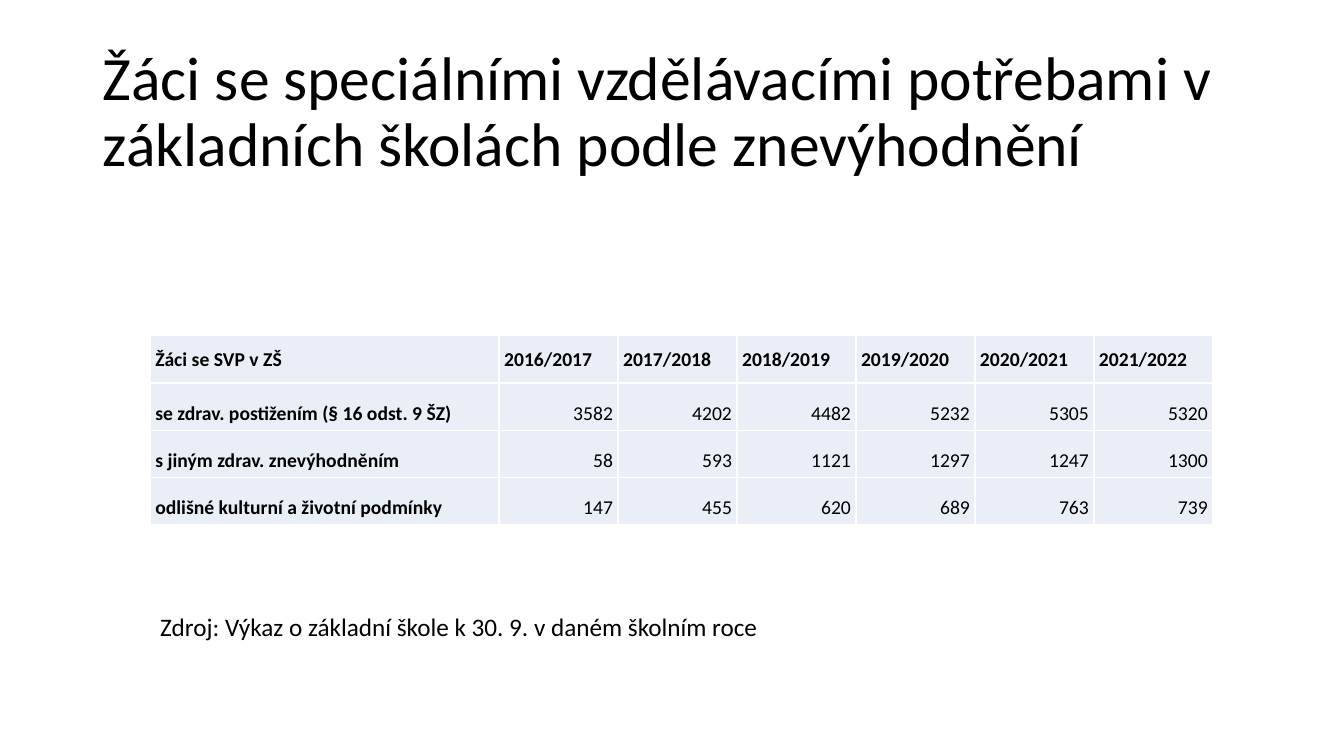
"""Build the slide on pupils with special educational needs in primary schools."""
from lxml import etree
from pptx import Presentation
from pptx.dml.color import RGBColor
from pptx.enum import text
from pptx.oxml import ns
from pptx.util import Inches, Pt

FONT = "Calibri"
BLACK, WHITE, PALE_BLUE = "000000", "FFFFFF", "EAEFF7"
YEARS = ["2016/2017", "2017/2018", "2018/2019", "2019/2020", "2020/2021", "2021/2022"]
PUPILS = {
    "se zdrav. postižením (§ 16 odst. 9 ŠZ)": [3582, 4202, 4482, 5232, 5305, 5320],
    "s jiným zdrav. znevýhodněním": [58, 593, 1121, 1297, 1247, 1300],
    "odlišné kulturní a životní podmínky": [147, 455, 620, 689, 763, 739],
}


def add_text(paragraph, content, size, bold=False):
    run = paragraph.add_run()
    run.text = content
    run.font.name = FONT
    run.font.size = Pt(size)
    run.font.bold = bold
    run.font.color.rgb = RGBColor.from_string(BLACK)


def add_borders(cell, color):
    properties = cell._tc.get_or_add_tcPr()
    for side in ("lnL", "lnR", "lnT", "lnB"):
        line = etree.SubElement(properties, ns.qn(f"a:{side}"), w=str(Pt(1)))
        fill = etree.SubElement(line, ns.qn("a:solidFill"))
        etree.SubElement(fill, ns.qn("a:srgbClr"), val=color)


presentation = Presentation()
presentation.slide_width = Inches(13.33)
presentation.slide_height = Inches(7.5)
slide = presentation.slides.add_slide(presentation.slide_layouts[5])

title = slide.shapes.title
title.left, title.top = Inches(0.92), Inches(0.4)
title.width, title.height = Inches(11.5), Inches(1.45)
title.text_frame.vertical_anchor = text.MSO_ANCHOR.MIDDLE
title.text_frame.word_wrap = True
title.text_frame.auto_size = text.MSO_AUTO_SIZE.NONE
heading = title.text_frame.paragraphs[0]
heading.alignment = text.PP_ALIGN.LEFT
heading.line_spacing = 0.9
add_text(heading, "Žáci se speciálními vzdělávacími potřebami v základních školách podle znevýhodnění", 44)

rows = [["Žáci se SVP v ZŠ", *YEARS]]
rows += [[label, *counts] for label, counts in PUPILS.items()]
table = slide.shapes.add_table(
    len(rows), len(rows[0]), Inches(1.49), Inches(3.33), Inches(10.56), Inches(1.87)
).table
for index, column in enumerate(table.columns):
    column.width = Inches(1.18 if index else 3.46)

for row_index, values in enumerate(rows):
    table.rows[row_index].height = Inches(0.47)
    for column_index, value in enumerate(values):
        is_count = row_index > 0 and column_index > 0
        cell = table.cell(row_index, column_index)
        add_borders(cell, WHITE)
        cell.fill.solid()
        cell.fill.fore_color.rgb = RGBColor.from_string(PALE_BLUE)
        cell.margin_left = cell.margin_right = Inches(0.05)
        cell.margin_top = cell.margin_bottom = Inches(0.05)
        cell.vertical_anchor = text.MSO_ANCHOR.BOTTOM if row_index else text.MSO_ANCHOR.MIDDLE
        paragraph = cell.text_frame.paragraphs[0]
        paragraph.alignment = text.PP_ALIGN.RIGHT if is_count else text.PP_ALIGN.LEFT
        add_text(paragraph, str(value), 14, bold=not is_count)

source = slide.shapes.add_textbox(Inches(1.49), Inches(6.02), Inches(6.19), Inches(0.4))
source.text_frame.word_wrap = False
source.text_frame.auto_size = text.MSO_AUTO_SIZE.SHAPE_TO_FIT_TEXT
add_text(source.text_frame.paragraphs[0], "Zdroj: Výkaz o základní škole k 30. 9. v daném školním roce", 18)

presentation.save("out.pptx")
